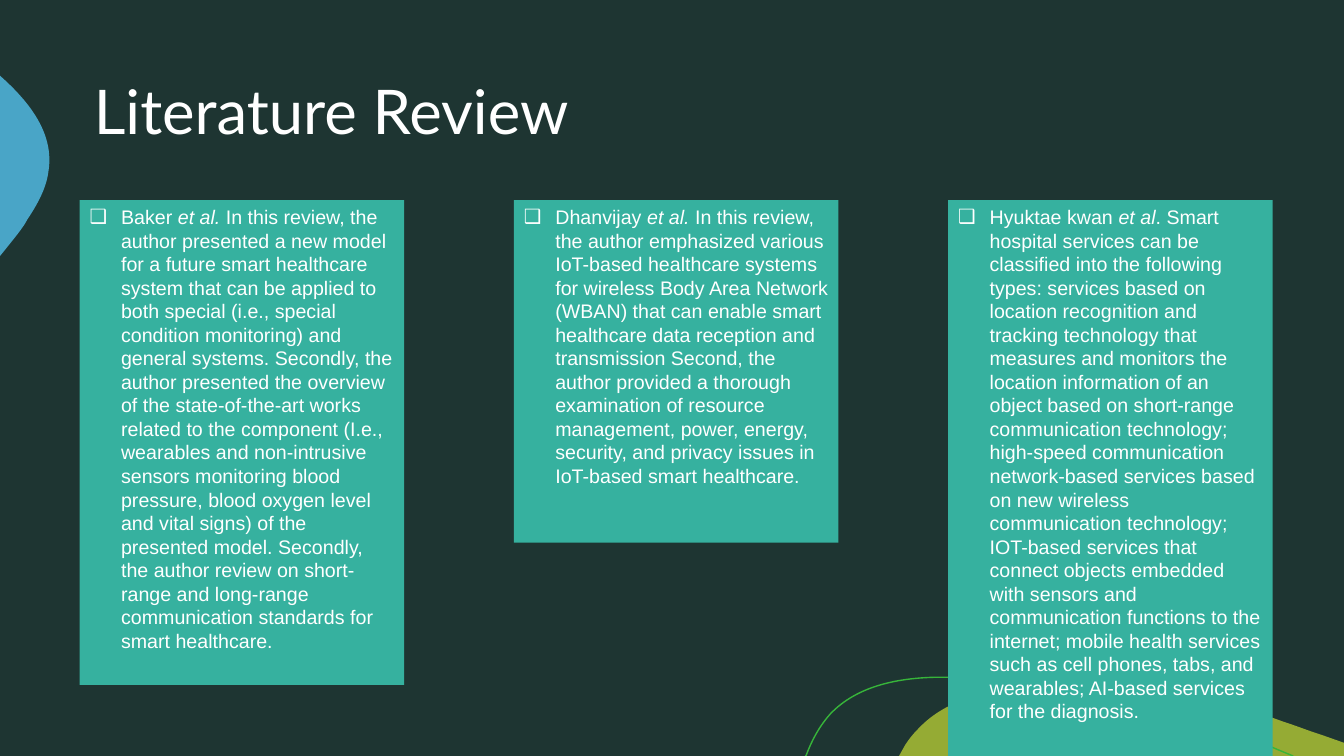
from lxml import etree
from pptx import Presentation, util as u
from pptx.dml.color import RGBColor
from pptx.enum import shapes, text
from pptx.oxml import ns

BACKGROUND, WHITE, TEAL = "1E3532", "FFFFFF", "36B19F"
OLIVE_HILL = [
    (758.9, 491.8), (812.2, 491.8, 866.9, 496.8, 916.6, 515.5),
    (925.9, 518.4, 934.6, 522, 943.9, 524.9), (960, 530.6), (960, 540),
    (642.2, 540), (646.6, 532.1), (649.4, 527.8, 652.3, 524.2, 655.9, 520.6),
    (676.1, 499, 707, 492.5, 736.6, 491.8),
    (743.8, 491.8, 751, 491.8, 758.9, 491.8),
]
BLUE_EDGE = [
    (0, 54), (0.7, 54.7), (21.6, 73.4, 38.9, 95.8, 34.6, 122.4),
    (33.1, 134.6, 26.6, 146.2, 19.4, 157),
    (17.3, 161.3, 12.2, 167.8, 5.8, 175.7), (0, 182.9),
]
GREEN_ARC = [
    (575.3, 540), (576, 539.3), (580.3, 527.8, 586.1, 517.7, 593.3, 509.8),
    (612, 490.3, 640.1, 484.6, 666.7, 483.8), (687.6, 483.8),
    (735.8, 483.8, 792, 496.1, 831.6, 505.4),
    (870.5, 514.8, 882.7, 523.4, 923.8, 540),
]
TITLE = "Literature Review"
REVIEWS = [
    (346.3, "Baker ", "et al. ",
     "In this review, the author presented a new model for a future smart "
     "healthcare system that can be applied to both special (i.e., special "
     "condition monitoring) and general systems. Secondly, the author presented "
     "the overview of the state-of-the-art works related to the component (I.e., "
     "wearables and non-intrusive sensors monitoring blood pressure, blood oxygen "
     "level and vital signs) of the presented model. Secondly, the author review "
     "on short-range and long-range communication standards for smart healthcare."),
    (244.8, "Dhanvijay ", "et al. ",
     "In this review, the author emphasized various IoT-based healthcare systems "
     "for wireless Body Area Network (WBAN) that can enable smart healthcare data "
     "reception and transmission Second, the author provided a thorough "
     "examination of resource management, power, energy, security, and privacy "
     "issues in IoT-based smart healthcare."),
    (397.4, "Hyuktae kwan ", "et al",
     ". Smart hospital services can be classified into the following types: "
     "services based on location recognition and tracking technology that measures "
     "and monitors the location information of an object based on short-range "
     "communication technology; high-speed communication network-based services "
     "based on new wireless communication technology; IOT-based services that "
     "connect objects embedded with sensors and communication functions to the "
     "internet; mobile health services such as cell phones, tabs, and wearables; "
     "AI-based services for the diagnosis."),
]
CARD_LEFT, CARD_TOP, CARD_WIDTH, CARD_PITCH = 56.9, 142.9, 231.8, 310.2
BULLET_INDENT = 22.5


def rgb(color):
    """Turn a hex string into a colour."""
    return RGBColor.from_string(color)


def add_run(p, content, size=14, font="Arial", color=WHITE, italic=False):
    """Append formatted text to a paragraph."""
    r = p.add_run()
    r.text = content
    r.font.size, r.font.name, r.font.italic = u.Pt(size), font, italic
    r.font.color.rgb = rgb(color)


def bend(sp, segments):
    """Turn the sides that have control points into cubic curves."""
    sides = list(sp._element.iter(ns.qn("a:lnTo")))
    for side, seg in zip(sides, segments[1:]):
        if len(seg) == 6:
            side.tag = ns.qn("a:cubicBezTo")
            for i, (x, y) in enumerate((seg[:2], seg[2:4])):
                pt = etree.Element(ns.qn("a:pt"))
                pt.set("x", str(u.Pt(x) - sp.left))
                pt.set("y", str(u.Pt(y) - sp.top))
                side.insert(i, pt)


def add_outline(s, segments, fill=None, line=None):
    """Draw a curved outline, closed when it is filled."""
    points = [(u.Pt(seg[-2]), u.Pt(seg[-1])) for seg in segments]
    builder = s.shapes.build_freeform(*points[0])
    builder.add_line_segments(points[1:], close=fill is not None)
    sp = builder.convert_to_shape()
    bend(sp, segments)
    sp.shadow.inherit = False
    if fill:
        sp.fill.solid()
        sp.fill.fore_color.rgb = rgb(fill)
    else:
        sp.fill.background()
    if line:
        sp.line.color.rgb = rgb(line)
        sp.line.width = u.Pt(1)
    else:
        sp.line.fill.background()


def add_bullet(p, char):
    """Give a paragraph a hanging bullet."""
    pPr = p._p.get_or_add_pPr()
    pPr.set("marL", str(u.Pt(BULLET_INDENT)))
    pPr.set("indent", str(-u.Pt(BULLET_INDENT)))
    etree.SubElement(pPr, ns.qn("a:buFont")).set("typeface", "Arial")
    etree.SubElement(pPr, ns.qn("a:buChar")).set("char", char)


def add_card(s, column, height, author, et_al, summary):
    """Draw one review card."""
    sp = s.shapes.add_shape(
        shapes.MSO_SHAPE.RECTANGLE, u.Pt(CARD_LEFT + column * CARD_PITCH),
        u.Pt(CARD_TOP), u.Pt(CARD_WIDTH), u.Pt(height))
    sp.shadow.inherit = False
    sp.fill.solid()
    sp.fill.fore_color.rgb = rgb(TEAL)
    sp.line.fill.background()
    tf = sp.text_frame
    tf.word_wrap = True
    tf.vertical_anchor = text.MSO_ANCHOR.TOP
    p = tf.paragraphs[0]
    p.alignment = text.PP_ALIGN.LEFT
    add_bullet(p, "❑")
    add_run(p, author)
    add_run(p, et_al, italic=True)
    add_run(p, summary)


def add_title(s):
    """Draw the slide title."""
    tf = s.shapes.add_textbox(u.Pt(60), u.Pt(21.6), u.Pt(864.5), u.Pt(120)).text_frame
    tf.word_wrap = True
    tf.vertical_anchor = text.MSO_ANCHOR.MIDDLE
    p = tf.paragraphs[0]
    p.line_spacing = 0.9
    add_run(p, TITLE, size=44, font="Lato")


def main():
    """Build the slide and save it."""
    prs = Presentation()
    prs.slide_width, prs.slide_height = u.Pt(960), u.Pt(540)
    s = prs.slides.add_slide(prs.slide_layouts[6])
    s.background.fill.solid()
    s.background.fill.fore_color.rgb = rgb(BACKGROUND)
    add_outline(s, OLIVE_HILL, fill="95AB34")
    add_outline(s, BLUE_EDGE, fill="49A5C7")
    add_outline(s, GREEN_ARC, line="37B53A")
    add_title(s)
    for column, review in enumerate(REVIEWS):
        add_card(s, column, *review)
    prs.save("out.pptx")


if __name__ == "__main__":
    main()
